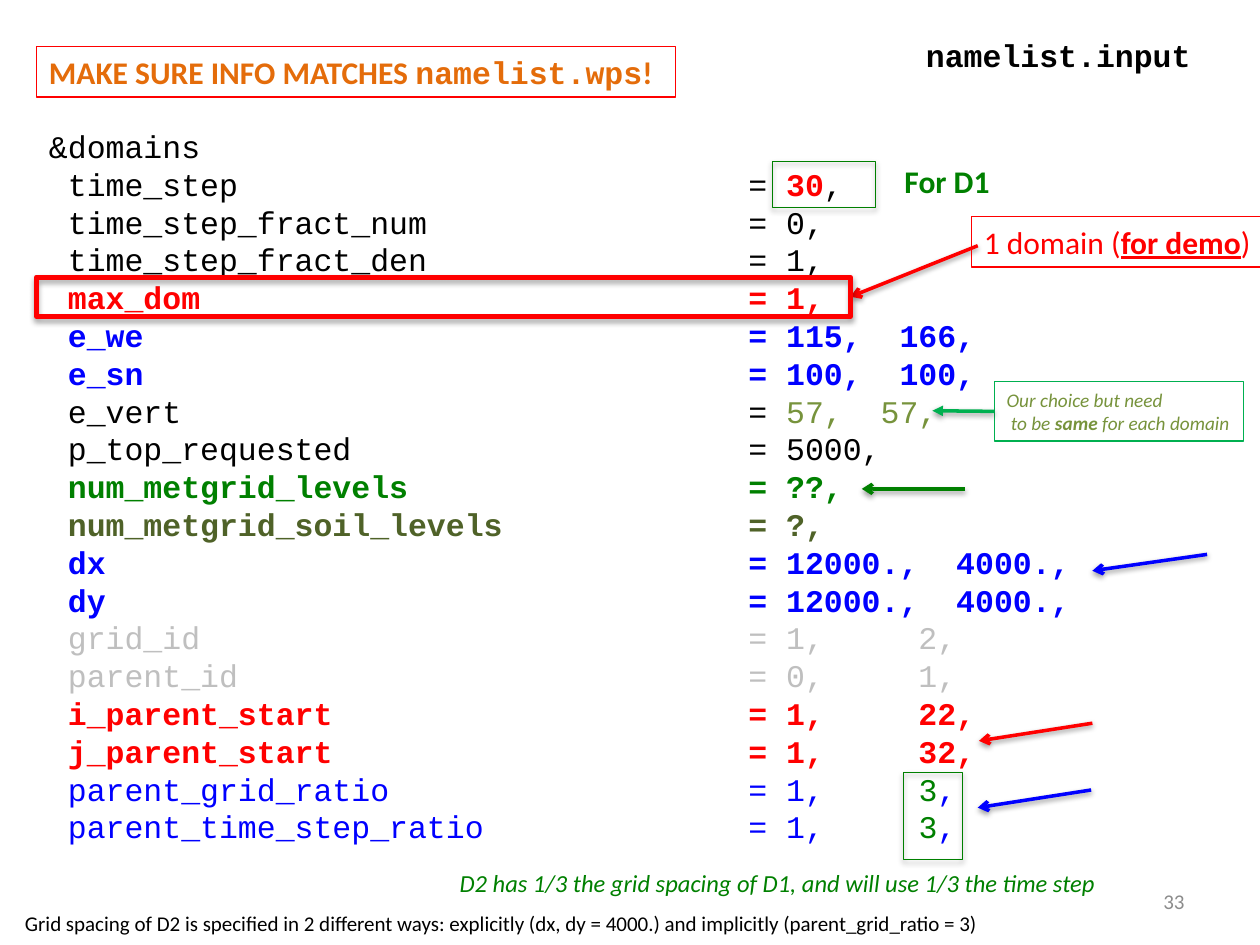
from lxml import etree
from pptx import Presentation
from pptx.dml.color import RGBColor
from pptx.enum.shapes import MSO_CONNECTOR as Connector, MSO_SHAPE as Shape
from pptx.enum.text import MSO_ANCHOR as Anchor, MSO_AUTO_SIZE as AutoSize, PP_ALIGN as Align
from pptx.oxml import parse_xml
from pptx.oxml.ns import nsdecls, qn
from pptx.util import Inches, Pt

SANS, MONO = "Calibri", "Courier New"
BLACK, WHITE, GRAY, SILVER = "000000", "FFFFFF", "8C8C8C", "BFBFBF"
RED, BLUE, GREEN, EMERALD = "FF0000", "0000FF", "008000", "00B050"
ORANGE, OLIVE, MOSS = "E46C0A", "77933C", "4F6228"
NAME_WIDTH, VALUE_WIDTH = 36, 7

SETTINGS = [
    ("time_step", "", BLACK, False, [("30", RED, True), (",", BLACK, False)]),
    ("time_step_fract_num", "0,", BLACK, False, []),
    ("time_step_fract_den", "1,", BLACK, False, []),
    ("max_dom", "1,", RED, True, []),
    ("e_we", "115,  166,", BLUE, True, []),
    ("e_sn", "100,  100,", BLUE, True, []),
    ("e_vert", "", BLACK, False, [("57,  57,", OLIVE, False)]),
    ("p_top_requested", "5000,", BLACK, False, []),
    ("num_metgrid_levels", "??,", GREEN, True, []),
    ("num_metgrid_soil_levels", "?,", MOSS, True, []),
    ("dx", "12000.,  4000.,", BLUE, True, []),
    ("dy", "12000.,  4000.,", BLUE, True, []),
    ("grid_id", "1,".ljust(VALUE_WIDTH) + "2,", SILVER, False, []),
    ("parent_id", "0,".ljust(VALUE_WIDTH) + "1,", SILVER, False, []),
    ("i_parent_start", "1,".ljust(VALUE_WIDTH) + "22,", RED, True, []),
    ("j_parent_start", "1,".ljust(VALUE_WIDTH) + "32,", RED, True, []),
] + [
    (name, "1,".ljust(VALUE_WIDTH), BLUE, False, [("3", GREEN, False), (",", BLUE, False)])
    for name in ("parent_grid_ratio", "parent_time_step_ratio")
]

ARROWS = [
    ((9.58, 4.4), (8.67, 4.53), BLUE),
    ((7.66, 3.88), (6.84, 3.88), GREEN),
    ((8.67, 5.74), (7.77, 5.88), RED),
    ((8.66, 6.27), (7.76, 6.41), BLUE),
]


def color(value):
    """Turn a hex string into a colour."""
    return RGBColor.from_string(value)


def add_span(para, text, size, hue, font=SANS, bold=False, italic=False, underline=False):
    """Append one styled run to a paragraph."""
    span = para.add_run()
    span.text = text
    span.font.size, span.font.name = Pt(size), font
    span.font.color.rgb = color(hue)
    span.font.bold, span.font.italic, span.font.underline = bold, italic, underline


def add_shadow(shape, alpha, distance):
    """Give a shape or connector a soft shadow that falls straight down."""
    properties = shape._element.spPr
    for effects in properties.findall(qn("a:effectLst")):
        properties.remove(effects)
    properties.append(parse_xml(
        f'<a:effectLst {nsdecls("a")}><a:outerShdw blurRad="{Pt(3.1)}" dist="{Pt(distance)}" '
        f'dir="5400000" rotWithShape="0"><a:srgbClr val="{BLACK}">'
        f'<a:alpha val="{alpha * 1000}"/></a:srgbClr></a:outerShdw></a:effectLst>'))


def add_label(page, box, line=None, fill=None):
    """Add a text box that grows with its text and return it."""
    label = page.shapes.add_textbox(*map(Inches, box))
    label.text_frame.word_wrap = False
    label.text_frame.auto_size = AutoSize.SHAPE_TO_FIT_TEXT
    if line:
        label.line.color.rgb, label.line.width = color(line), Pt(0.75)
    if fill:
        label.fill.solid()
        label.fill.fore_color.rgb = color(fill)
    return label


def add_note(page, box, text, size, hue, **style):
    """Add a label that holds a single run."""
    add_span(add_label(page, box).text_frame.paragraphs[0], text, size, hue, **style)


def add_frame(page, box, hue, width=0.75):
    """Add a hollow highlight rectangle with a shadow."""
    frame = page.shapes.add_shape(Shape.RECTANGLE, *map(Inches, box))
    frame.shadow.inherit = False
    frame.fill.background()
    frame.line.color.rgb, frame.line.width = color(hue), Pt(width)
    add_shadow(frame, 35, 1.8)
    return frame


def add_arrow(page, start, end, hue, head="arrow"):
    """Add a straight arrow with a shadow."""
    arrow = page.shapes.add_connector(Connector.STRAIGHT, *map(Inches, start + end))
    arrow.line.color.rgb, arrow.line.width = color(hue), Pt(2)
    etree.SubElement(arrow.line._get_or_add_ln(), qn("a:tailEnd"), type=head)
    add_shadow(arrow, 38, 1.6)
    return arrow


def add_listing(page, box):
    """Write the domains section of the namelist."""
    frame = add_label(page, box).text_frame
    add_span(frame.paragraphs[0], "&domains", 18, BLACK, MONO)
    for name, value, hue, bold, extras in SETTINGS:
        para = frame.add_paragraph()
        add_span(para, f" {name:<{NAME_WIDTH}}= {value}", 18, hue, MONO, bold)
        for text, extra_hue, extra_bold in extras:
            add_span(para, text, 18, extra_hue, MONO, extra_bold)


def add_warning(page, box):
    """Write the boxed reminder at the top."""
    para = add_label(page, box, RED, WHITE).text_frame.paragraphs[0]
    for text, font in (("MAKE SURE INFO MATCHES ", SANS), ("namelist.wps", MONO), ("!", SANS)):
        add_span(para, text, 18, ORANGE, font, bold=True)


def add_domain_callout(page, box):
    """Write the boxed remark on the number of domains."""
    para = add_label(page, box, RED).text_frame.paragraphs[0]
    for text, strong in (("1 domain (", False), ("for demo", True), (")", False)):
        add_span(para, text, 18, RED, bold=strong, underline=strong)


def add_level_callout(page, box):
    """Write the boxed remark on vertical levels and return it."""
    callout = add_label(page, box, EMERALD)
    frame = callout.text_frame
    add_span(frame.paragraphs[0], "Our choice but need", 11, OLIVE, italic=True)
    para = frame.add_paragraph()
    for text, strong in ((" to be ", False), ("same", True), (" for each domain", False)):
        add_span(para, text, 11, OLIVE, bold=strong, italic=True)
    return callout


def add_page_number(page, box):
    """Write the page number at the lower right."""
    frame = page.shapes.add_textbox(*map(Inches, box)).text_frame
    frame.word_wrap, frame.vertical_anchor = True, Anchor.MIDDLE
    frame.paragraphs[0].alignment = Align.RIGHT
    add_span(frame.paragraphs[0], "33", 12, GRAY)


def main():
    """Build and save the deck."""
    deck = Presentation()
    deck.slide_width, deck.slide_height = Inches(10), Inches(7.5)
    page = deck.slides.add_slide(deck.slide_layouts[6])

    add_listing(page, (0.29, 0.96, 8.38, 5.86))
    add_note(page, (7.25, 0.24, 2.32, 0.4), "namelist.input", 18, BLACK, font=MONO, bold=True)
    domain_arrow = add_arrow(page, (7.76, 1.95), (6.75, 2.36), RED)
    domain_row = add_frame(page, (0.29, 2.2, 6.46, 0.31), RED, 3)
    domain_arrow.end_connect(domain_row, 3)
    for start, end, hue in ARROWS:
        add_arrow(page, start, end, hue)
    add_warning(page, (0.29, 0.37, 5.07, 0.4))
    add_page_number(page, (7.17, 6.95, 2.33, 0.4))
    add_note(page, (3.55, 6.84, 5.34, 0.34),
             "D2 has 1/3 the grid spacing of D1, and will use 1/3 the time step",
             14, GREEN, italic=True)
    add_frame(page, (7.17, 6.13, 0.47, 0.69), GREEN)
    add_frame(page, (6.13, 1.28, 0.82, 0.37), GREEN)
    add_note(page, (7.08, 1.24, 0.88, 0.4), "For D1", 18, GREEN, bold=True)
    add_domain_callout(page, (7.71, 1.72, 2.34, 0.4))
    level_callout = add_level_callout(page, (7.89, 3.03, 1.98, 0.47))
    level_arrow = add_arrow(page, (7.89, 3.26), (7.4, 3.26), EMERALD, "triangle")
    level_arrow.begin_connect(level_callout, 1)
    add_note(page, (0.1, 7.18, 7.8, 0.3),
             "Grid spacing of D2 is specified in 2 different ways: explicitly "
             "(dx, dy = 4000.) and implicitly (parent_grid_ratio = 3)", 12, BLACK)
    deck.save("out.pptx")


if __name__ == "__main__":
    main()
